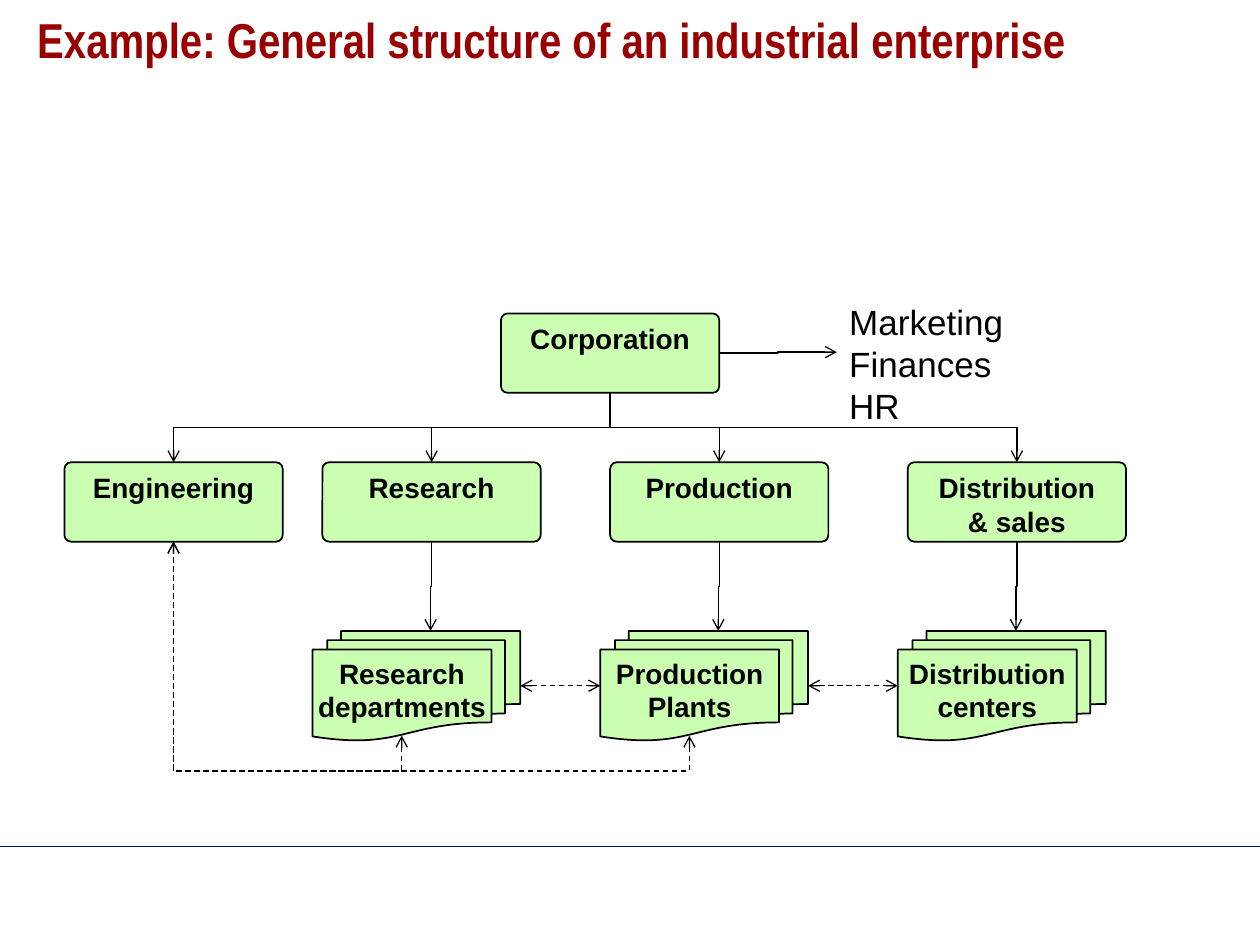
import pptx
import pptx.util
import pptx.dml.color
import pptx.enum.dml
import pptx.enum.shapes
import pptx.enum.text
import pptx.oxml
import pptx.oxml.ns

Cm, Pt = pptx.util.Cm, pptx.util.Pt
KIND = pptx.enum.shapes.MSO_SHAPE
LINK = pptx.enum.shapes.MSO_CONNECTOR
ALIGN = pptx.enum.text.PP_ALIGN
HUE = {"title": "990000", "text": "000000", "line": "000000",
       "fill": "99FF66", "rule": "002060"}

TITLE = ["Example: General structure of an industrial enterprise"]
STAFF = ["Marketing", "Finances", "HR"]
TOP = ["Corporation"]
UNITS = [
    (1.3, ["Engineering"], None),
    (6.5, ["Research"], ["Research", "departments"]),
    (12.3, ["Production"], ["Production", "Plants"]),
    (18.3, ["Distribution", "& sales"], ["Distribution", "centers"]),
]

BOX_W, BOX_H, DOC_W, DOC_H = 4.4, 1.6, 4.19, 2.21
TOP_X, TOP_Y, UNIT_Y, DOC_Y = 10.1, 6.32, 9.32, 12.72
SHIFT, DOC_TOP, DOC_LOW, LOW_Y = 0.2, 2.38, 1.8, 14.83
STAFF_X, STAFF_Y = 16.87, 5.92

FONT = {
    "title": {"name": "Arial Narrow", "size": Pt(28), "bold": True},
    "box": {"name": "Arial", "size": Pt(16), "bold": True},
    "staff": {"name": "Arial", "size": Pt(20), "bold": False},
}
FRAME = {"margin_left": Cm(0.25), "margin_right": Cm(0.25),
         "margin_top": Cm(0.13), "margin_bottom": Cm(0.13),
         "vertical_anchor": pptx.enum.text.MSO_ANCHOR.TOP}


def rgb(name):
    return pptx.dml.color.RGBColor.from_string(HUE[name])


def apply(part, form):
    for key, val in form.items():
        setattr(part, key, val)


def add(node, tag, **vals):
    kid = pptx.oxml.ns.qn("a:" + tag)
    kid = node.makeelement(kid, vals)
    node.append(kid)


def write(shape, lines, style, wrap=False, hue="text", **form):
    frame = shape.text_frame
    apply(frame, {**FRAME, "word_wrap": wrap})
    for i, line in enumerate(lines):
        para = frame.add_paragraph() if i else frame.paragraphs[0]
        apply(para, form)
        run = para.add_run()
        run.text = line
        apply(run.font, FONT[style])
        run.font.color.rgb = rgb(hue)


def label(x, y, w, h, lines, style, **form):
    box = slide.shapes.add_textbox(Cm(x), Cm(y), Cm(w), Cm(h))
    write(box, lines, style, wrap=True, **form)


def block(kind, x, y, w, h, lines):
    shape = slide.shapes.add_shape(kind, Cm(x), Cm(y), Cm(w), Cm(h))
    if kind == KIND.ROUNDED_RECTANGLE:
        shape.adjustments[0] = 0.083
    shape.shadow.inherit = False
    shape.fill.solid()
    shape.fill.fore_color.rgb = rgb("fill")
    tint = shape._element.spPr.find(".//" + pptx.oxml.ns.qn("a:srgbClr"))
    add(tint, "alpha", val="50000")
    shape.line.color.rgb = rgb("line")
    shape.line.width = Pt(1)
    write(shape, lines, "box", alignment=ALIGN.CENTER)


def link(start, end, kind=LINK.ELBOW, turn=False, dash=False,
         bend=None, heads=("tailEnd",), hue="line"):
    if turn:
        mid_x, mid_y = [(a + b) / 2 for a, b in zip(start, end)]
        start, end = [(mid_x + y - mid_y, mid_y - x + mid_x)
                      for x, y in (start, end)]
    wire = slide.shapes.add_connector(kind, *map(Cm, start + end))
    wire.line.color.rgb = rgb(hue)
    wire.line.width = Pt(0.75)
    if dash:
        wire.line.dash_style = pptx.enum.dml.MSO_LINE.DASH
    prop = wire._element.spPr
    if turn:
        prop.xfrm.set("rot", "5400000")
    if bend is not None:
        guide = prop.find(".//" + pptx.oxml.ns.qn("a:avLst"))
        add(guide, "gd", name="adj1", fmla=f"val {bend}")
    for head in heads:
        add(wire.line._get_or_add_ln(), head, type="arrow")
    add(prop, "effectLst")


deck = pptx.Presentation()
deck.slide_width, deck.slide_height = Cm(25.4), Cm(19.05)
slide = deck.slides.add_slide(deck.slide_layouts[6])
BOTH = ("headEnd", "tailEnd")

link((0, 17.07), (25.4, 17.07), LINK.STRAIGHT, heads=(), hue="rule")
label(0.5, 0.2, 24.4, 2.1, TITLE, "title", hue="title", line_spacing=0.9)
block(KIND.ROUNDED_RECTANGLE, TOP_X, TOP_Y, BOX_W, BOX_H, TOP)
label(STAFF_X, STAFF_Y, 3.63, 2.36, STAFF, "staff")
link((TOP_X + BOX_W, TOP_Y + BOX_H / 2), (STAFF_X, STAFF_Y + 1.18))

hub = (TOP_X + BOX_W / 2, TOP_Y + BOX_H)
base = (UNITS[0][0] + BOX_W / 2, UNIT_Y + BOX_H)
docs = []
for x, name, group in UNITS:
    mid = x + BOX_W / 2
    block(KIND.ROUNDED_RECTANGLE, x, UNIT_Y, BOX_W, BOX_H, name)
    link(hub, (mid, UNIT_Y), turn=True)
    if group:
        left = x - SHIFT
        docs.append(left)
        block(KIND.FLOWCHART_MULTIDOCUMENT, left, DOC_Y, DOC_W, DOC_H, group)
        link((mid, UNIT_Y + BOX_H), (left + DOC_TOP, DOC_Y), turn=True)

side = DOC_Y + DOC_H / 2
for left, right in zip(docs, docs[1:]):
    link((left + DOC_W, side), (right, side), dash=True, heads=BOTH)
    link((left + DOC_LOW, LOW_Y), base, turn=True, dash=True,
         bend=-18300, heads=BOTH)

deck.save("out.pptx")
